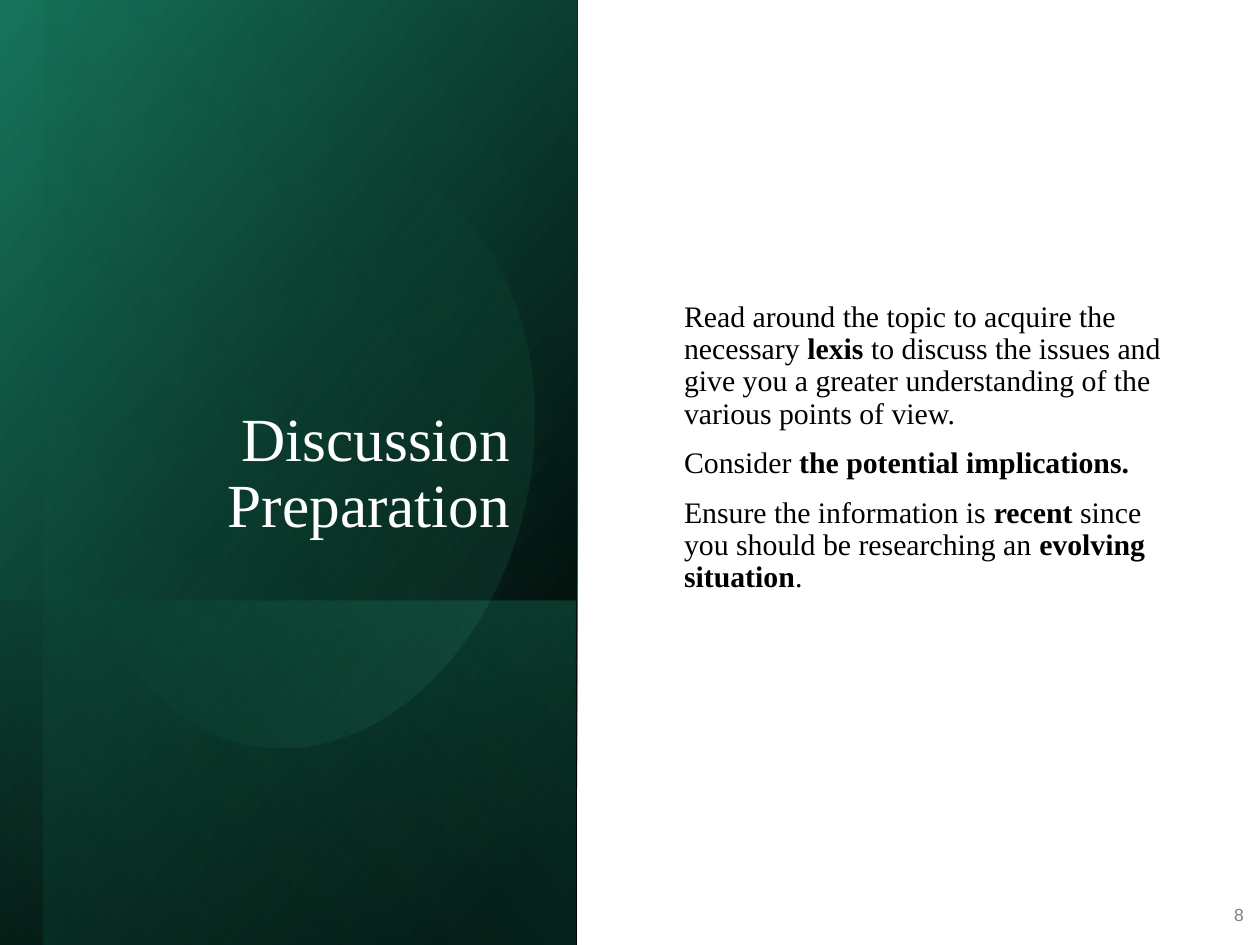
from dataclasses import dataclass

from lxml import etree
from pptx import Presentation
from pptx.dml.color import RGBColor
from pptx.enum.shapes import MSO_SHAPE
from pptx.enum.text import MSO_ANCHOR, PP_ALIGN
from pptx.oxml.ns import qn
from pptx.util import Inches, Pt

RECT, OVAL = MSO_SHAPE.RECTANGLE, MSO_SHAPE.OVAL
LEFT, RIGHT = PP_ALIGN.LEFT, PP_ALIGN.RIGHT
MIDDLE, BOTTOM = MSO_ANCHOR.MIDDLE, MSO_ANCHOR.BOTTOM
WIDE, HIGH = Inches(10), Inches(7.5)


@dataclass(frozen=True)
class Theme:
    serif: str = "Times New Roman"
    sans: str = "Arial"
    white: str = "FFFFFF"
    black: str = "000000"
    gray: str = "808080"
    deep: str = "16745A"
    green: str = "1D9A78"
    mint: str = "5AE0BB"
    head: int = 35
    body: int = 17
    note: int = 10


THEME = Theme()


def part(box, left, top, wide, high):
    x, y, w, h = box
    return (x + w * left / 100, y + h * top / 100,
            w * wide / 100, h * high / 100)


def blend(shape, stops, angle):
    fill = shape.fill
    fill.gradient()
    grad = shape._element.spPr.find(qn("a:gradFill"))
    for child in list(grad):
        grad.remove(child)
    group = etree.SubElement(grad, qn("a:gsLst"))
    for place, color, alpha in stops:
        stop = etree.SubElement(group, qn("a:gs"), pos=str(place * 1000))
        tone = etree.SubElement(stop, qn("a:srgbClr"), val=color)
        if alpha < 100:
            etree.SubElement(tone, qn("a:alpha"), val=str(alpha * 1000))
    etree.SubElement(grad, qn("a:lin"), ang=str(angle * 60000), scaled="0")


def tile(slide, box, stops, angle, kind=RECT, turn=90, flip=True):
    x, y, w, h = box
    shape = slide.shapes.add_shape(
        kind, int(x + (w - h) / 2), int(y + (h - w) / 2), int(h), int(w))
    shape.rotation = turn
    shape.shadow.inherit = False
    shape.line.fill.background()
    if flip:
        shape._element.spPr.find(qn("a:xfrm")).set("flipH", "1")
    blend(shape, stops, angle)


def write(slide, box, paras, size, color, font=THEME.serif, align=LEFT,
          anchor=MIDDLE, pitch=None, before=0, after=0):
    frame = slide.shapes.add_textbox(*map(int, box)).text_frame
    frame.word_wrap = True
    frame.vertical_anchor = anchor
    for index, runs in enumerate(paras):
        para = frame.add_paragraph() if index else frame.paragraphs[0]
        para.alignment = align
        para.line_spacing = pitch
        para.space_before, para.space_after = Pt(before), Pt(after)
        for count, words in enumerate(runs):
            run = para.add_run()
            run.text = words
            run.font.name = font
            run.font.size = Pt(size)
            run.font.bold = count % 2 == 1
            run.font.color.rgb = RGBColor.from_string(color)


def panel(slide, box, title):
    tile(slide, box, [(8, THEME.black, 100), (100, THEME.deep, 100)], 50)
    tile(slide, part(box, 0, 63.53, 99.8, 36.53),
         [(2, THEME.green, 29), (100, THEME.black, 30)], 130)
    tile(slide, part(box, 7.53, 0, 92.36, 100),
         [(0, THEME.black, 0), (99, THEME.green, 11)], 130)
    tile(slide, part(box, 14.63, 16.4, 77.29, 62.93),
         [(39, THEME.green, 0), (100, THEME.mint, 15)], 290,
         kind=OVAL, turn=101.6, flip=False)
    write(slide, part(box, 14.85, 8.53, 75.76, 49.33), [[title]],
          THEME.head, THEME.white, align=RIGHT, anchor=BOTTOM, pitch=0.9)


def advice(slide, box, paras, number):
    write(slide, part(box, 13.84, 9.47, 73.62, 75.87), paras,
          THEME.body, THEME.black, pitch=0.9, before=10)
    write(slide, part(box, 92.62, 94.13, 6.83, 5.33), [[number]],
          THEME.note, THEME.gray, font=THEME.sans, align=RIGHT, after=6)


def main():
    deck = Presentation()
    deck.slide_width, deck.slide_height = WIDE, HIGH
    slide = deck.slides.add_slide(deck.slide_layouts[6])
    page = (0, 0, WIDE, HIGH)
    split = 45.8
    panel(slide, part(page, 0, 0, split, 100), "Discussion Preparation")
    advice(slide, part(page, split, 0, 100 - split, 100), [
        ["Read around the topic to acquire the necessary ", "lexis",
         " to discuss the issues and give you a greater understanding"
         " of the various points of view."],
        ["Consider ", "the potential implications."],
        ["Ensure the information is ", "recent",
         " since you should be researching an ", "evolving situation", "."],
    ], "8")
    deck.save("out.pptx")


if __name__ == "__main__":
    main()
